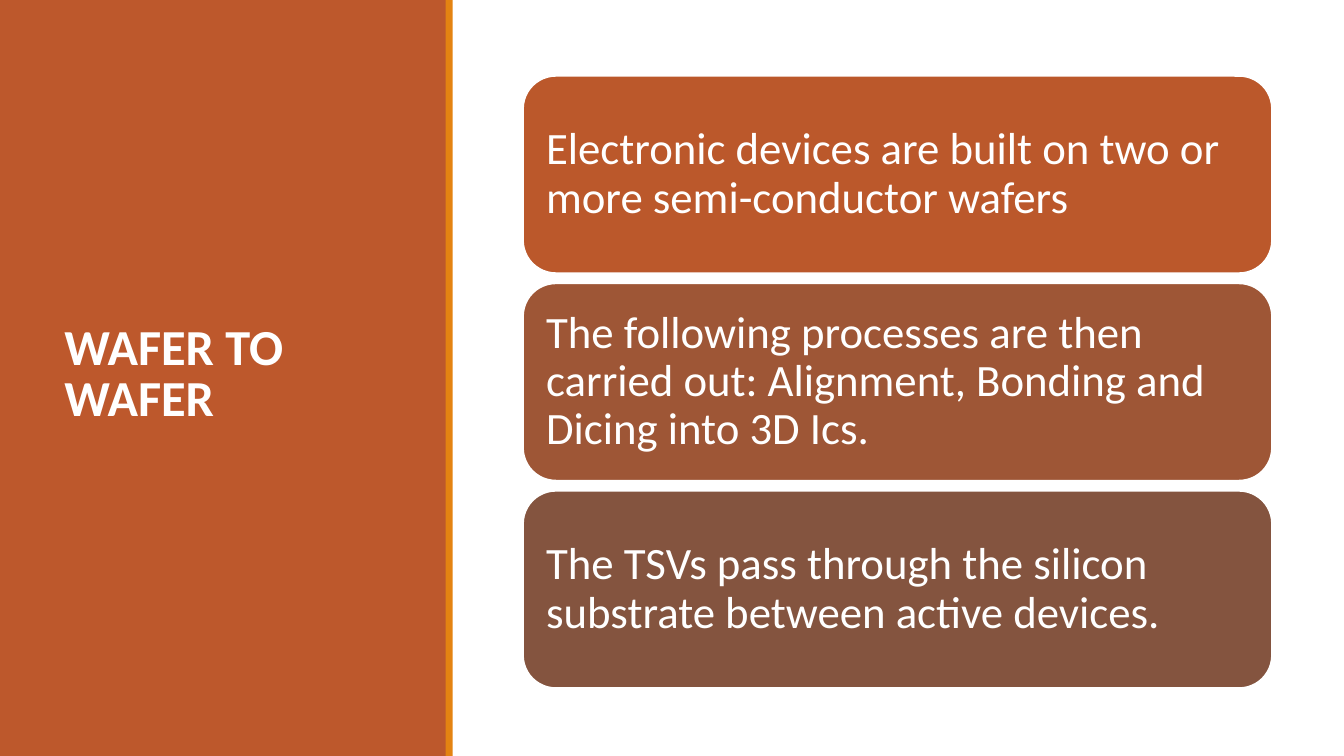
"""Build the wafer-to-wafer slide: a title panel beside three stacked statement cards."""
from dataclasses import dataclass

from pptx import Presentation
from pptx.dml.color import RGBColor
from pptx.enum.shapes import MSO_SHAPE as Shape
from pptx.enum.text import MSO_ANCHOR as Anchor, PP_ALIGN as Align
from pptx.util import Pt

TITLE = "WAFER TO WAFER"
STATEMENTS = [
    ("Electronic devices are built on two or more semi-conductor wafers", "BB582B"),
    ("The following processes are then carried out: Alignment, Bonding and Dicing into 3D Ics.", "9E5636"),
    ("The TSVs pass through the silicon substrate between active devices.", "84543F"),
]


@dataclass(frozen=True)
class Theme:
    """Colours, font and type sizes of the slide."""
    panel: str = "BD582C"
    accent: str = "E48312"
    light: str = "FFFFFF"
    font: str = "Calibri"
    title_size: int = 36
    card_size: int = 32


THEME = Theme()
SLIDE_W, SLIDE_H = 960, 540
PANEL_W = 319
STRIPE_LEFT, STRIPE_W = 318.4, 5
TITLE_BOX = (38.9, 41, 242.6, 454.3)
CARD_LEFT, CARD_TOP, CARD_W, CARD_H = 373.6, 54.2, 535, 140.9
CARD_GAP = 7.3
CARD_INSET = 9.6


def add_block(slide, kind, box, color):
    """Add a filled shape without shadow or outline."""
    block = slide.shapes.add_shape(kind, *map(Pt, box))
    block.shadow.inherit = False
    block.fill.solid()
    block.fill.fore_color.rgb = RGBColor.from_string(color)
    block.line.fill.background()
    return block


def write(shape, words, size, spacing, inset, bold=False):
    """Set left-aligned, vertically centred light text in a shape."""
    frame = shape.text_frame
    frame.text = words
    frame.word_wrap = True
    frame.vertical_anchor = Anchor.MIDDLE
    frame.margin_left = frame.margin_right = Pt(inset[0])
    frame.margin_top = frame.margin_bottom = Pt(inset[1])
    paragraph = frame.paragraphs[0]
    paragraph.alignment = Align.LEFT
    paragraph.line_spacing = spacing
    font = paragraph.runs[0].font
    font.name, font.size, font.bold = THEME.font, Pt(size), bold
    font.color.rgb = RGBColor.from_string(THEME.light)


def main():
    deck = Presentation()
    deck.slide_width, deck.slide_height = Pt(SLIDE_W), Pt(SLIDE_H)
    slide = deck.slides.add_slide(deck.slide_layouts[6])

    add_block(slide, Shape.RECTANGLE, (0, 0, PANEL_W, SLIDE_H), THEME.panel)
    title = slide.shapes.add_textbox(*map(Pt, TITLE_BOX))
    write(title, TITLE, THEME.title_size, 0.85, (7.2, 3.6), bold=True)
    add_block(slide, Shape.RECTANGLE, (STRIPE_LEFT, 0, STRIPE_W, SLIDE_H), THEME.accent)

    for row, (statement, color) in enumerate(STATEMENTS):
        top = CARD_TOP + row * (CARD_H + CARD_GAP)
        card = add_block(slide, Shape.ROUNDED_RECTANGLE, (CARD_LEFT, top, CARD_W, CARD_H), color)
        card.line.color.rgb = RGBColor.from_string(THEME.light)
        card.line.width = Pt(1.25)
        write(card, statement, THEME.card_size, 0.9, (CARD_INSET, CARD_INSET))

    deck.save("out.pptx")


if __name__ == "__main__":
    main()
